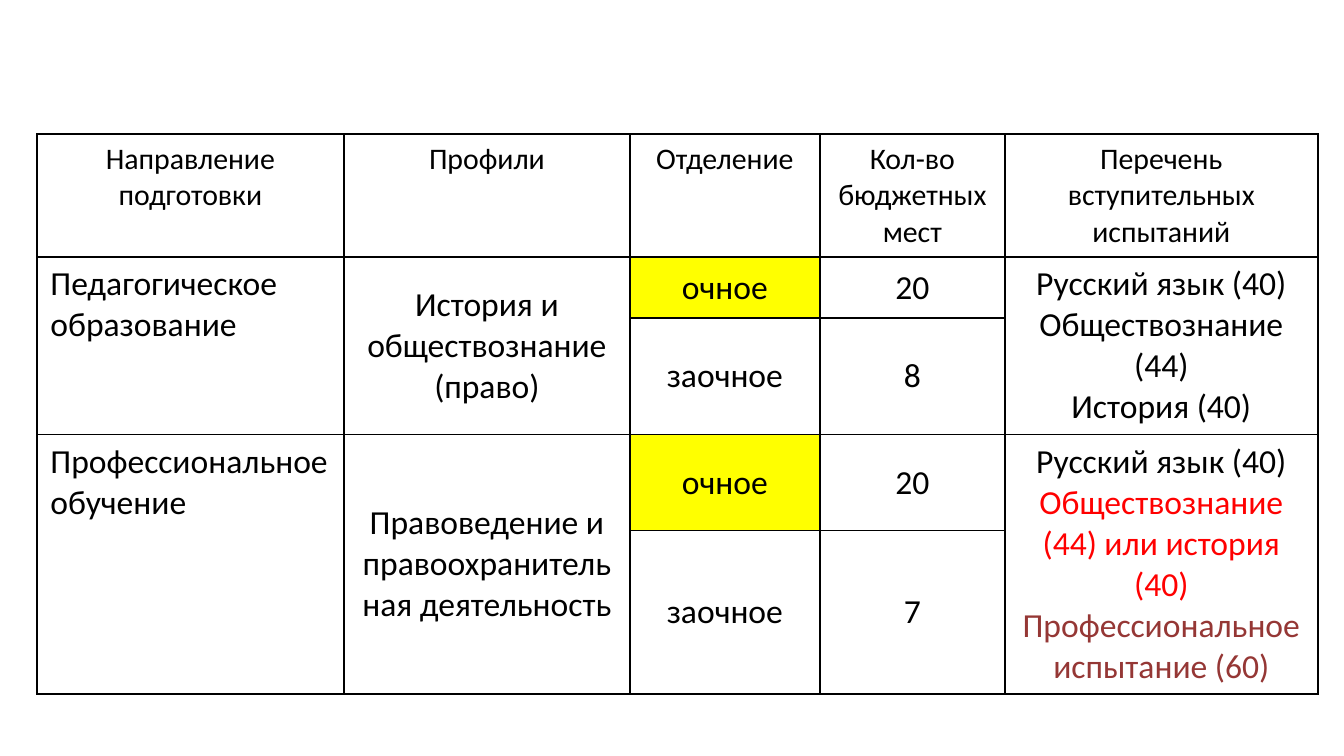
"""Build a slide with a table of study programmes and entrance exams."""
from dataclasses import dataclass

from lxml.etree import SubElement
from pptx import Presentation
from pptx.dml.color import RGBColor
from pptx.enum.text import MSO_ANCHOR, PP_ALIGN
from pptx.oxml.ns import qn
from pptx.table import Table, _Cell
from pptx.util import Pt

SCALE = 914400 / 134.4
HUES = {"ink": "000000", "mark": "FFFF00", "red": "FF0000", "wine": "953735"}
COLS = [307, 286, 190, 185, 313]
ROWS = [121, 61, 114, 96, 159]
HEADS = [
    "Направление подготовки",
    "Профили",
    "Отделение",
    "Кол-во бюджетных мест",
    "Перечень вступительных испытаний",
]


@dataclass
class Course:
    field: str
    major: str
    seats: tuple[str, str]
    exams: str
    tints: tuple[str, ...] = ("ink", "ink", "ink")


COURSES = [
    Course(
        "Педагогическое образование",
        "История и обществознание (право)",
        ("20", "8"),
        "Русский язык (40)\nОбществознание (44)\nИстория (40)",
    ),
    Course(
        "Профессиональное обучение",
        "Правоведение и правоохранительная деятельность",
        ("20", "7"),
        "Русский язык (40)\nОбществознание (44) или история (40)\n"
        "Профессиональное испытание (60)",
        ("ink", "red", "wine"),
    ),
]


def px(count: int) -> int:
    """Turn pixels into EMU."""
    return round(count * SCALE)


def rule(cell: _Cell) -> None:
    """Give a cell a thin black border and no fill."""
    props = cell._tc.get_or_add_tcPr()
    for side in ("lnL", "lnR", "lnT", "lnB"):
        line = SubElement(props, qn(f"a:{side}"), w=str(Pt(1)))
        fill = SubElement(line, qn("a:solidFill"))
        SubElement(fill, qn("a:srgbClr"), val=HUES["ink"])
    cell.fill.background()


def write(
    cell: _Cell,
    text: str,
    size: int = 18,
    align: PP_ALIGN = PP_ALIGN.CENTER,
    anchor: MSO_ANCHOR = MSO_ANCHOR.MIDDLE,
    tints: tuple[str, ...] = ("ink",),
) -> None:
    """Put text in a cell, with one colour for each paragraph."""
    cell.text_frame.text = text
    cell.vertical_anchor = anchor
    for para, tint in zip(cell.text_frame.paragraphs, tints):
        para.alignment = align
        for run in para.runs:
            run.font.name = "Calibri"
            run.font.size = Pt(size)
            run.font.color.rgb = RGBColor.from_string(HUES[tint])


def add_course(table: Table, top: int, course: Course) -> None:
    """Fill the two rows of one course."""
    for col in (0, 1, 4):
        table.cell(top, col).merge(table.cell(top + 1, col))
    write(table.cell(top, 0), course.field,
          align=PP_ALIGN.LEFT, anchor=MSO_ANCHOR.TOP)
    write(table.cell(top, 1), course.major)
    for row, (mode, seats) in enumerate(zip(("очное", "заочное"), course.seats), top):
        write(table.cell(row, 2), mode)
        write(table.cell(row, 3), seats)
    write(table.cell(top, 4), course.exams,
          anchor=MSO_ANCHOR.TOP, tints=course.tints)
    fill = table.cell(top, 2).fill
    fill.solid()
    fill.fore_color.rgb = RGBColor.from_string(HUES["mark"])


def main() -> None:
    """Draw the slide and save it."""
    deck = Presentation()
    deck.slide_width, deck.slide_height = px(1344), px(756)
    slide = deck.slides.add_slide(deck.slide_layouts[6])
    table = slide.shapes.add_table(
        len(ROWS), len(COLS), px(37), px(134), px(sum(COLS)), px(sum(ROWS))
    ).table
    table.first_row = table.horz_banding = False
    for col, width in zip(table.columns, COLS):
        col.width = px(width)
    for row, height in zip(table.rows, ROWS):
        row.height = px(height)
    for cell in table.iter_cells():
        rule(cell)
    for col, head in enumerate(HEADS):
        write(table.cell(0, col), head, size=16, anchor=MSO_ANCHOR.TOP)
    for index, course in enumerate(COURSES):
        add_course(table, 1 + 2 * index, course)
    deck.save("out.pptx")


if __name__ == "__main__":
    main()
